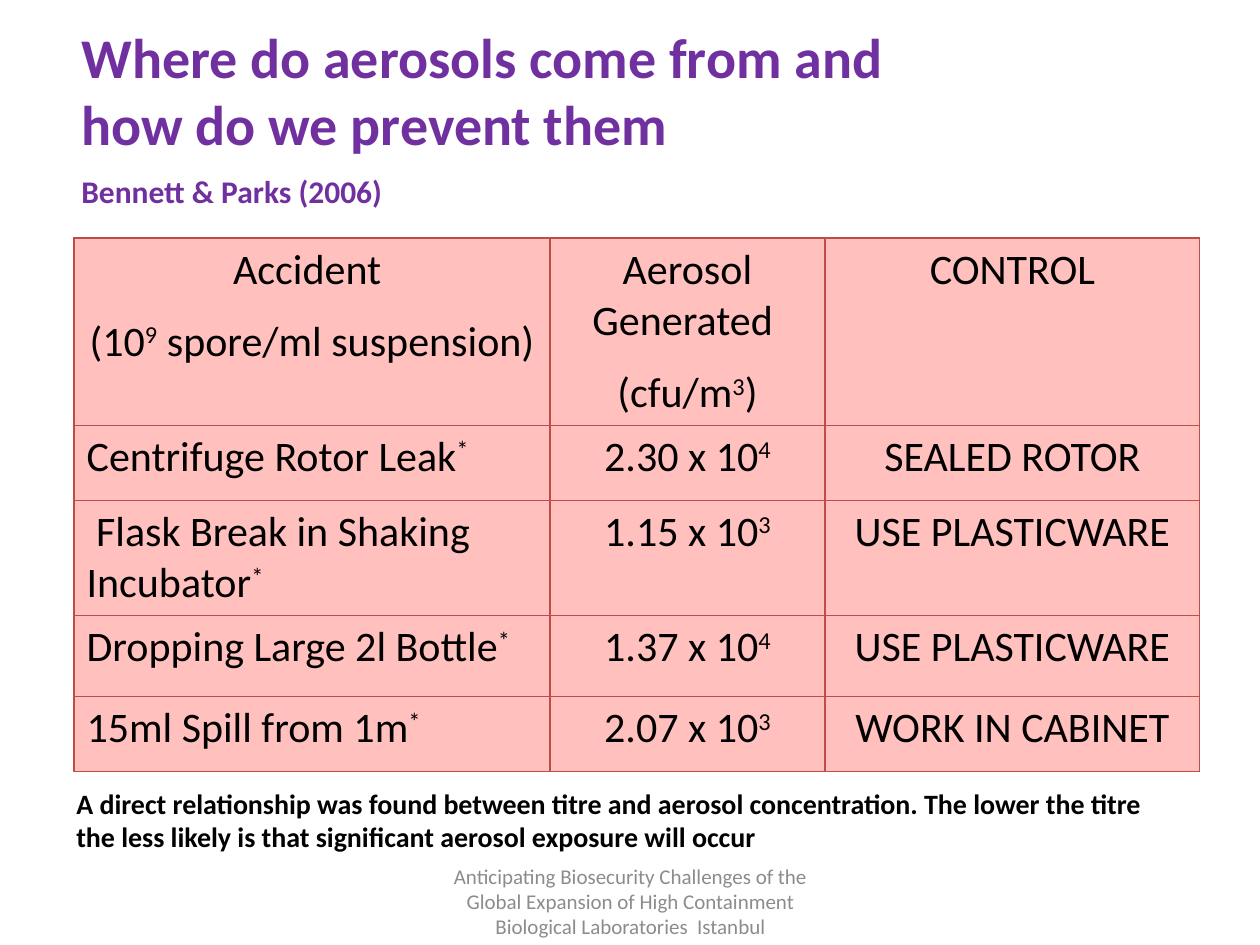
from lxml.etree import SubElement
from pptx import Presentation
from pptx.dml.color import RGBColor
from pptx.enum.text import MSO_ANCHOR, PP_ALIGN
from pptx.oxml.ns import qn
from pptx.util import Emu, Pt

PIXELS_PER_INCH = 126
FONT = "Calibri"
PURPLE = RGBColor(0x70, 0x30, 0xA0)
BLACK = RGBColor(0x00, 0x00, 0x00)
GREY = RGBColor(0x8C, 0x8C, 0x8C)
PINK = RGBColor(0xFF, 0xC0, 0xBE)
BORDER_RED = RGBColor(0xBF, 0x4C, 0x48)

COLUMN_WIDTHS = [476, 275, 375]
ROW_HEIGHTS = [187, 75, 115, 81, 75]
# Each cell is a list of paragraphs; text between carets is superscript.
ROWS = [
    [["Accident ", "(10^9^ spore/ml suspension)"],
     ["Aerosol Generated ", "(cfu/m^3^)"],
     ["CONTROL"]],
    [["Centrifuge Rotor Leak^*^"], ["2.30 x 10^4^"], ["SEALED ROTOR"]],
    [[" Flask Break in Shaking Incubator^*^"], ["1.15 x 10^3^"], ["USE PLASTICWARE"]],
    [["Dropping Large 2l Bottle^*^"], ["1.37 x 10^4^"], ["USE PLASTICWARE"]],
    [["15ml Spill from 1m^*^"], ["2.07 x 10^3^"], ["WORK IN CABINET"]],
]


def px(length):
    return Emu(round(length * 914400 / PIXELS_PER_INCH))


def add_runs(paragraph, text, size, color, bold=False):
    """Add text run by run, raising the pieces between carets."""
    for index, piece in enumerate(text.split("^")):
        if not piece:
            continue
        run = paragraph.add_run()
        run.text = piece
        run.font.name = FONT
        run.font.size = Pt(size)
        run.font.bold = bold
        run.font.color.rgb = color
        if index % 2:
            run.font._element.set("baseline", "30000")


def fill_text(text_frame, lines, color, bold=False,
              alignment=PP_ALIGN.LEFT, gap=0):
    """Write (text, size) lines, with a gap in points between them."""
    for index, (text, size) in enumerate(lines):
        paragraph = text_frame.add_paragraph() if index else text_frame.paragraphs[0]
        paragraph.alignment = alignment
        if index:
            paragraph.space_before = Pt(gap)
        add_runs(paragraph, text, size, color, bold)


def add_text(slide, left, top, width, height, lines, color,
             anchor=MSO_ANCHOR.TOP, **style):
    text_box = slide.shapes.add_textbox(px(left), px(top), px(width), px(height))
    text_frame = text_box.text_frame
    text_frame.word_wrap = True
    text_frame.vertical_anchor = anchor
    fill_text(text_frame, lines, color, **style)


def set_borders(cell):
    properties = cell._tc.get_or_add_tcPr()
    for position, side in enumerate(("a:lnL", "a:lnR", "a:lnT", "a:lnB")):
        line = SubElement(properties, qn(side), w=str(Pt(0.75)))
        properties.insert(position, line)
        fill = SubElement(line, qn("a:solidFill"))
        SubElement(fill, qn("a:srgbClr"), val=str(BORDER_RED))


def add_accident_table(slide, left, top):
    table = slide.shapes.add_table(
        len(ROWS), len(COLUMN_WIDTHS), px(left), px(top),
        px(sum(COLUMN_WIDTHS)), px(sum(ROW_HEIGHTS))).table
    for column, width in zip(table.columns, COLUMN_WIDTHS):
        column.width = px(width)
    for row_index, (row, height) in enumerate(zip(table.rows, ROW_HEIGHTS)):
        row.height = px(height)
        for column_index, cell in enumerate(row.cells):
            cell.fill.solid()
            cell.fill.fore_color.rgb = PINK
            set_borders(cell)
            is_accident = row_index > 0 and column_index == 0
            lines = [(text, 24) for text in ROWS[row_index][column_index]]
            fill_text(cell.text_frame, lines, BLACK, gap=12,
                      alignment=PP_ALIGN.LEFT if is_accident else PP_ALIGN.CENTER)


def main():
    presentation = Presentation()
    presentation.slide_width = px(1260)
    presentation.slide_height = px(945)
    slide = presentation.slides.add_slide(presentation.slide_layouts[6])

    add_accident_table(slide, 74, 238)
    add_text(slide, 69, 16, 935, 205,
             [("Where do aerosols come from and how do we prevent them", 32),
              ("Bennett & Parks (2006)", 18)],
             PURPLE, bold=True, gap=9)
    add_text(slide, 64, 780, 1131, 81,
             [("A direct relationship was found between titre and aerosol "
               "concentration. The lower the titre the less likely is that "
               "significant aerosol exposure will occur", 16)],
             BLACK, bold=True)
    add_text(slide, 431, 876, 399, 50,
             [("Anticipating Biosecurity Challenges of the Global Expansion of "
               "High Containment Biological Laboratories  Istanbul", 12)],
             GREY, anchor=MSO_ANCHOR.MIDDLE, alignment=PP_ALIGN.CENTER)

    presentation.save("out.pptx")


if __name__ == "__main__":
    main()
